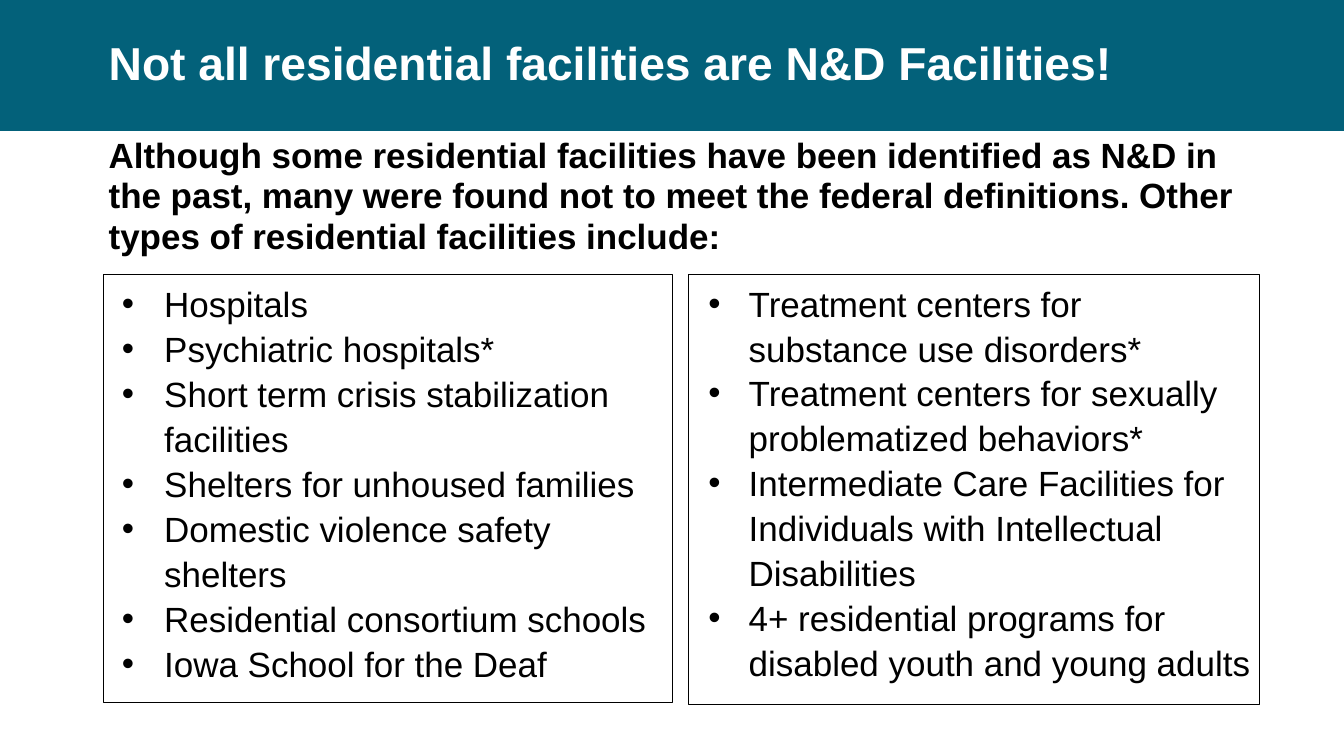
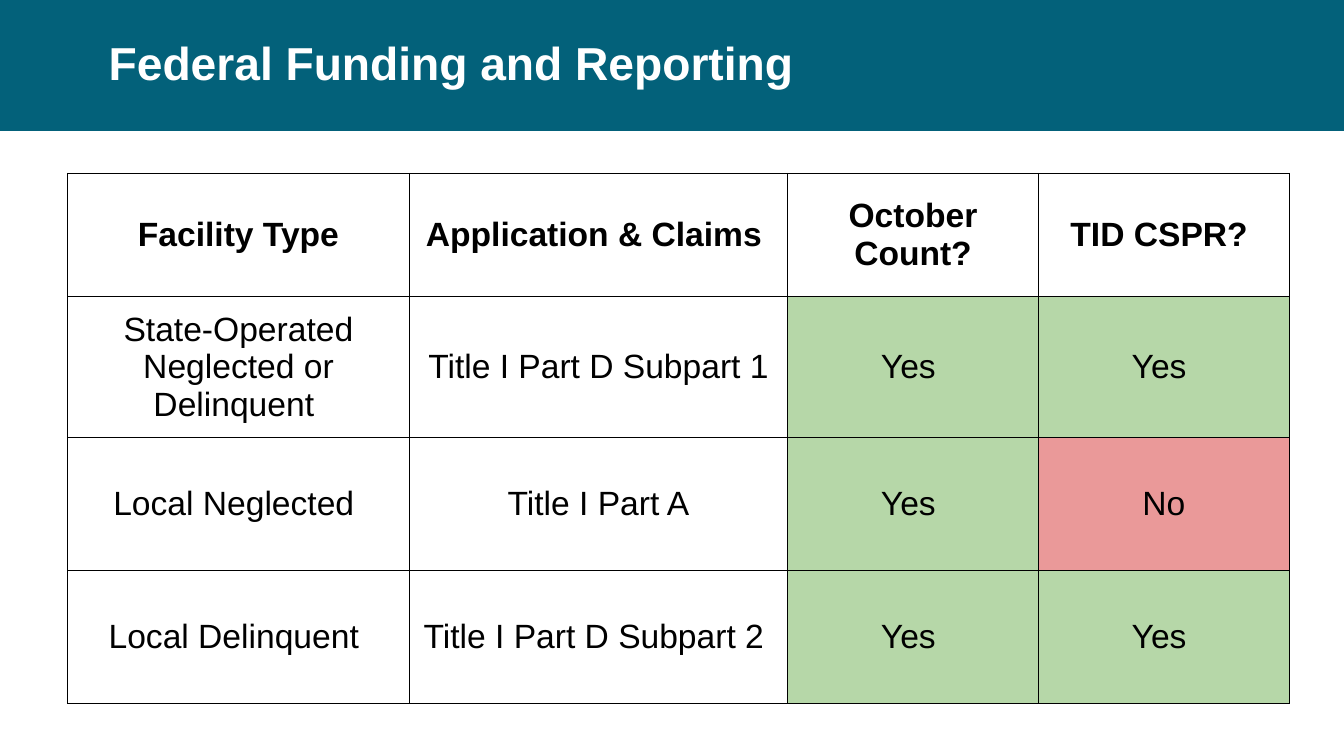
from lxml import etree
from pptx import Presentation
from pptx.dml.color import RGBColor
from pptx.enum.shapes import MSO_SHAPE
from pptx.enum.text import MSO_ANCHOR, PP_ALIGN
from pptx.oxml.ns import qn
from pptx.util import Cm, Pt

RECT = MSO_SHAPE.RECTANGLE
TOP, MIDDLE, BOTTOM = MSO_ANCHOR.TOP, MSO_ANCHOR.MIDDLE, MSO_ANCHOR.BOTTOM
LEFT, CENTER = PP_ALIGN.LEFT, PP_ALIGN.CENTER


class Theme:
    font = "Arial"
    teal = RGBColor.from_string("03617A")
    white = RGBColor.from_string("FFFFFF")
    black = RGBColor.from_string("000000")
    green = RGBColor.from_string("B6D7A8")
    red = RGBColor.from_string("EA9999")
    title, body, cell = Pt(33), Pt(25), Pt(24)
    rule = Pt(0.75)


WIDTH, HEIGHT = Cm(33.87), Cm(19.05)
BAND = Cm(3.3)
EDGE, SPAN = Cm(2.49), Cm(29.21)

deck = Presentation()
deck.slide_width, deck.slide_height = WIDTH, HEIGHT
blank = deck.slide_layouts[6]


def write(frame, text, size, color=Theme.black, bold=False,
          anchor=TOP, align=LEFT, space=1.0):
    """Fill a text frame, one paragraph per line of text, and format it."""
    frame.text = text
    frame.word_wrap = True
    frame.vertical_anchor = anchor
    for para in frame.paragraphs:
        para.alignment = align
        para.line_spacing = space
        for run in para.runs:
            run.font.name = Theme.font
            run.font.size = size
            run.font.bold = bold
            run.font.color.rgb = color


def start(title):
    """Add a slide with the teal band and its title."""
    slide = deck.slides.add_slide(blank)
    band = slide.shapes.add_shape(RECT, 0, 0, WIDTH, BAND)
    band.shadow.inherit = False
    band.fill.solid()
    band.fill.fore_color.rgb = Theme.teal
    band.line.fill.background()
    box = slide.shapes.add_textbox(EDGE, 0, SPAN, BAND)
    write(box.text_frame, title, Theme.title, Theme.white, True, MIDDLE, space=0.9)
    return slide


# Slide 1: other kinds of facility
slide = start("Not all residential facilities are N&D Facilities!")
intro = slide.shapes.add_textbox(EDGE, Cm(3.66), SPAN, Cm(2.95))
write(
    intro.text_frame,
    "Although some residential facilities have been identified as N&D in the past, "
    "many were found not to meet the federal definitions. "
    "Other types of residential facilities include:",
    Theme.body, bold=True, anchor=BOTTOM, space=0.96,
)

lists = [
    (Cm(2.62), Cm(6.93), Cm(14.33), Cm(10.77), Cm(1.07), [
        "Hospitals",
        "Psychiatric hospitals*",
        "Short term crisis stabilization facilities",
        "Shelters for unhoused families",
        "Domestic violence safety shelters",
        "Residential consortium schools",
        "Iowa School for the Deaf",
    ]),
    (Cm(17.35), Cm(6.91), Cm(14.4), Cm(10.85), Cm(1.02), [
        "Treatment centers for substance use disorders*",
        "Treatment centers for sexually problematized behaviors*",
        "Intermediate Care Facilities for Individuals with Intellectual Disabilities",
        "4+ residential programs for disabled youth and young adults",
    ]),
]
for left, top, width, height, hang, items in lists:
    box = slide.shapes.add_textbox(left, top, width, height)
    box.line.color.rgb = Theme.black
    box.line.width = Theme.rule
    write(box.text_frame, "\n".join(items), Theme.body, space=1.07)
    for para in box.text_frame.paragraphs:
        props = para._p.get_or_add_pPr()
        props.set("marL", str(Cm(1.27)))
        props.set("indent", str(-hang))
        etree.SubElement(props, qn("a:buFont"), typeface=Theme.font)
        etree.SubElement(props, qn("a:buChar"), char="•")

# Slide 2: funding table
slide = start("Federal Funding and Reporting")
rows = [
    ["Facility Type", "Application & Claims ", "October Count?", "TID CSPR? "],
    ["State-Operated Neglected or Delinquent ", "Title I Part D Subpart 1", "Yes ", "Yes "],
    ["Local Neglected ", "Title I Part A", "Yes ", "No"],
    ["Local Delinquent ", "Title I Part D Subpart 2 ", "Yes ", "Yes "],
]
widths = [Cm(8.62), Cm(9.53), Cm(6.32), Cm(6.32)]
heights = [Cm(3.1)] + [Cm(3.35)] * 3
fills = {"Yes": Theme.green, "No": Theme.red}

table = slide.shapes.add_table(
    len(rows), len(widths), Cm(1.7), Cm(4.37), sum(widths), sum(heights)
).table
table.first_row = table.horz_banding = False
for col, width in zip(table.columns, widths):
    col.width = width
for row, height in zip(table.rows, heights):
    row.height = height

for r, texts in enumerate(rows):
    for c, text in enumerate(texts):
        cell = table.cell(r, c)
        write(cell.text_frame, text, Theme.cell, bold=r == 0, align=CENTER)
        cell.vertical_anchor = MIDDLE
        cell.margin_left = cell.margin_right = Cm(0.25)
        cell.margin_top = cell.margin_bottom = Cm(0.25)
        props = cell._tc.get_or_add_tcPr()
        for side in ("lnL", "lnR", "lnT", "lnB"):
            line = etree.SubElement(props, qn("a:" + side), w=str(Theme.rule))
            paint = etree.SubElement(line, qn("a:solidFill"))
            etree.SubElement(paint, qn("a:srgbClr"), val=str(Theme.black))
        color = fills.get(text.strip())
        if color:
            cell.fill.solid()
            cell.fill.fore_color.rgb = color
        else:
            cell.fill.background()

deck.save("out.pptx")
